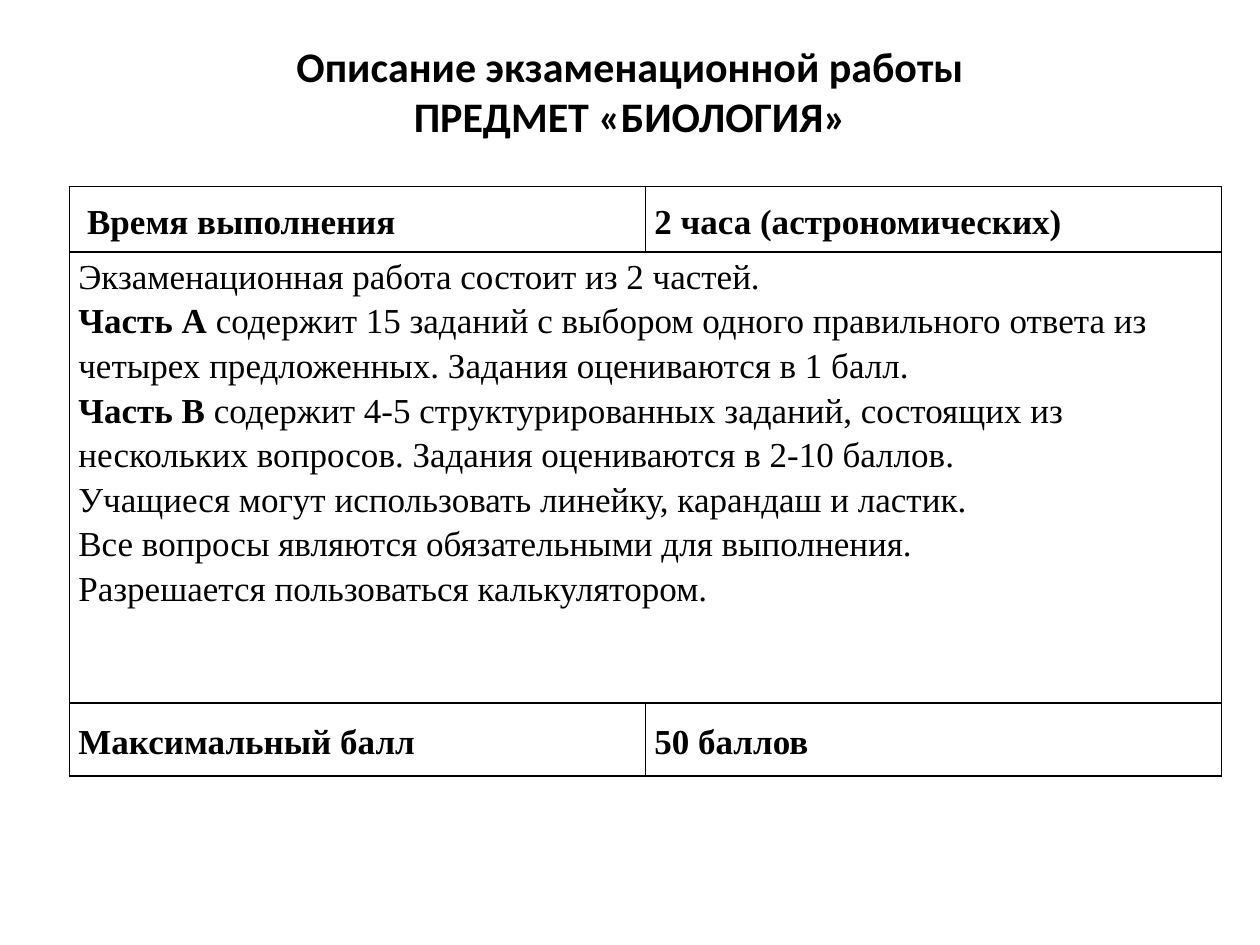
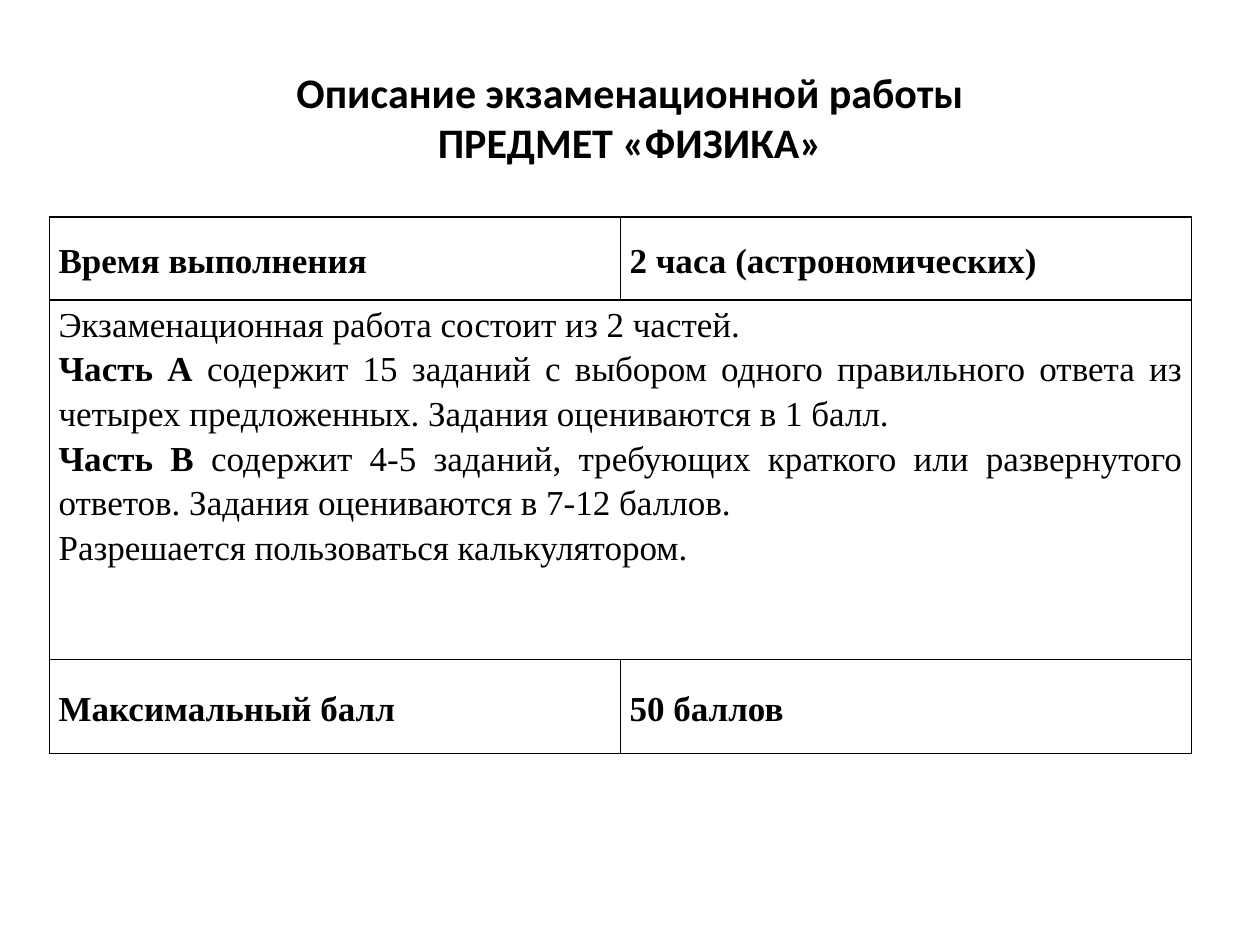
import pptx
import pptx.dml.color
import pptx.enum.text
import pptx.oxml
import pptx.oxml.ns
import pptx.util

Cm = pptx.util.Cm
Pt = pptx.util.Pt
ALIGN = pptx.enum.text.PP_ALIGN
ANCHOR = pptx.enum.text.MSO_ANCHOR

COLORS = {"text": "000000", "line": "000000", "back": "FFFFFF"}
HEAD = "Описание экзаменационной работы"
PARTS = "Экзаменационная работа состоит из 2 частей."
PART_A = ("Часть А| содержит 15 заданий с выбором одного правильного ответа "
          "из четырех предложенных. Задания оцениваются в 1 балл.")
CALC = "Разрешается пользоваться калькулятором."
TIME = "Время выполнения"
HOURS = "2 часа (астрономических)"
SCORE = ("Максимальный балл", "50 баллов")


def color(name):
    return pptx.dml.color.RGBColor.from_string(COLORS[name])


def put(frame, lines, font="Times New Roman", size=20, bold=False,
        align=ALIGN.LEFT, space=1.15, soft=False):
    """Write lines as paragraphs, or as one with soft breaks; a lead before | is bold."""
    para = frame.paragraphs[0]
    for i, line in enumerate(lines):
        if i and soft:
            para.add_line_break()
        elif i:
            para = frame.add_paragraph()
        para.alignment = align
        para.line_spacing = space
        lead, _, rest = line.rpartition("|")
        for text, heavy in ((lead, True), (rest, bold)):
            if text:
                run = para.add_run()
                run.text = text
                run.font.name = font
                run.font.size = Pt(size)
                run.font.bold = heavy
                run.font.color.rgb = color("text")


def add_title(slide, subject, lift):
    """Fill the title; lift is extra room kept below the text, in cm."""
    title = slide.shapes.title
    title.left, title.top = Cm(1.27), Cm(0.76)
    title.width, title.height = Cm(22.86), Cm(3.18)
    frame = title.text_frame
    frame.vertical_anchor = ANCHOR.MIDDLE
    frame.margin_bottom = Cm(0.13 + lift)
    put(frame, [HEAD, f"ПРЕДМЕТ «{subject}»"], font="Calibri", size=24,
        bold=True, align=ALIGN.CENTER, space=1.0, soft=True)


def style(cell, anchor):
    cell.margin_left = cell.margin_right = Cm(0.18)
    cell.margin_top = cell.margin_bottom = 0
    cell.vertical_anchor = anchor
    cell.fill.background()
    props = cell._tc.get_or_add_tcPr()
    for i, side in enumerate("LRTB"):
        props.insert(i, pptx.oxml.parse_xml(
            f'<a:ln{side} {pptx.oxml.ns.nsdecls("a")} w="{Pt(1)}"><a:solidFill>'
            f'<a:srgbClr val="{COLORS["line"]}"/></a:solidFill></a:ln{side}>'))


def add_grid(slide, left, top, width, rows, first, body, align):
    """Add the exam table: two cells, one merged body row, two cells."""
    table = slide.shapes.add_table(3, 2, Cm(left), Cm(top), Cm(2 * width),
                                   Cm(sum(rows))).table
    table.first_row = table.horz_banding = False
    for col in table.columns:
        col.width = Cm(width)
    for row, height in zip(table.rows, rows):
        row.height = Cm(height)
    for r in range(3):
        for c in range(2):
            style(table.cell(r, c), ANCHOR.TOP if r == 1 else ANCHOR.MIDDLE)
    table.cell(1, 0).merge(table.cell(1, 1))
    for r, texts in ((0, (first, HOURS)), (2, SCORE)):
        for c, text in enumerate(texts):
            put(table.cell(r, c).text_frame, [text], bold=True)
    put(table.cell(1, 0).text_frame, body, align=align)


def add_exam(deck, subject, lift, **grid):
    slide = deck.slides.add_slide(deck.slide_layouts[5])
    add_title(slide, subject, lift)
    add_grid(slide, **grid)


def main():
    deck = pptx.Presentation()
    deck.slide_width, deck.slide_height = Cm(25.4), Cm(19.05)
    back = deck.slide_master.background.fill
    back.solid()
    back.fore_color.rgb = color("back")

    add_exam(deck, "БИОЛОГИЯ", 1.03, left=1.4, top=3.76, width=11.61,
             rows=(1.32, 9.09, 1.47), first=" " + TIME, align=ALIGN.LEFT,
             body=[PARTS, PART_A,
                   "Часть В| содержит 4-5 структурированных заданий, состоящих "
                   "из нескольких вопросов. Задания оцениваются в 2-10 баллов.",
                   "Учащиеся могут использовать линейку, карандаш и ластик.",
                   "Все вопросы являются обязательными для выполнения.", CALC])
    add_exam(deck, "ФИЗИКА", 0, left=1, top=4.37, width=11.51,
             rows=(1.68, 7.24, 1.9), first=TIME, align=ALIGN.JUSTIFY,
             body=[PARTS, PART_A,
                   "Часть В| содержит 4-5 заданий, требующих краткого или "
                   "развернутого ответов. Задания оцениваются в 7-12 баллов.",
                   CALC])
    deck.save("out.pptx")


if __name__ == "__main__":
    main()
